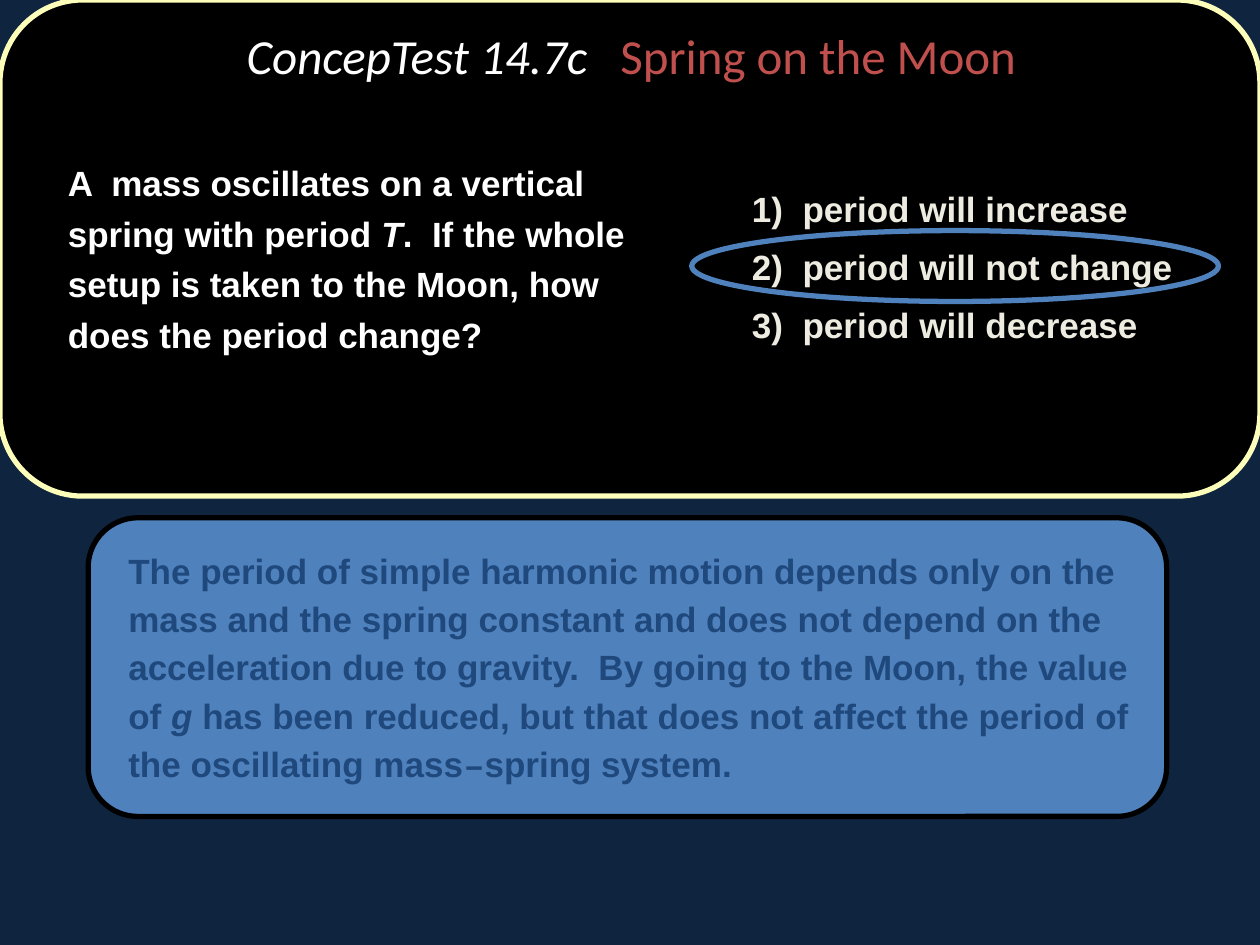
from pptx import Presentation
from pptx import util as u
from pptx.dml.color import RGBColor
from pptx.enum import shapes, text

W, H = u.Inches(10), u.Inches(7.5)
NAVY = RGBColor(0x0F, 0x24, 0x3E)
BLUE = RGBColor(0x4F, 0x81, 0xBD)
DARK_BLUE = RGBColor(0x1F, 0x49, 0x7D)
BLACK = RGBColor(0, 0, 0)
WHITE = RGBColor(0xFF, 0xFF, 0xFF)
CREAM = RGBColor(0xEE, 0xEC, 0xE1)
YELLOW = RGBColor(0xFC, 0xFE, 0xB9)
RED = RGBColor(0xC0, 0x50, 0x4D)


def place(x, y, w, h):
    """Turn shares of the slide's size into lengths."""
    return [u.Emu(int(v)) for v in (x * W, y * H, w * W, h * H)]


def add_outline(s, kind, box, line, fill=None):
    sp = s.shapes.add_shape(kind, *place(*box))
    sp.shadow.inherit = False
    if fill is None:
        sp.fill.background()
    else:
        sp.fill.solid()
        sp.fill.fore_color.rgb = fill
    sp.line.color.rgb = line
    sp.line.width = u.Pt(3)


def add_run(p, words, size, color, font="Arial", bold=False, italic=False):
    r = p.add_run()
    r.text = words
    r.font.size, r.font.name = u.Pt(size), font
    r.font.bold, r.font.italic = bold, italic
    r.font.color.rgb = color


def add_text_box(s, box):
    tf = s.shapes.add_textbox(*place(*box)).text_frame
    tf.word_wrap = True
    return tf


def add_body(s, box, paragraphs, color, spacing):
    """Add bold indented paragraphs; each is a list of (words, format) runs."""
    tf = add_text_box(s, box)
    for i, runs in enumerate(paragraphs):
        p = tf.add_paragraph() if i else tf.paragraphs[0]
        p.line_spacing = spacing
        p.space_before = u.Pt(7)
        p._p.get_or_add_pPr().set("marL", str(u.Inches(0.44)))
        for words, fmt in runs:
            add_run(p, words, 20, color, bold=True, **fmt)


def add_title(s, box):
    tf = add_text_box(s, box)
    tf.vertical_anchor = text.MSO_ANCHOR.MIDDLE
    p = tf.paragraphs[0]
    p.alignment = text.PP_ALIGN.CENTER
    p.line_spacing = 0.9
    add_run(p, "ConcepTest 14.7c   ", 28, WHITE, "Calibri", italic=True)
    add_run(p, "Spring on the Moon", 28, RED, "Calibri")


def main():
    prs = Presentation()
    prs.slide_width, prs.slide_height = W, H
    s = prs.slides.add_slide(prs.slide_layouts[6])
    s.background.fill.solid()
    s.background.fill.fore_color.rgb = NAVY

    rounded, oval = shapes.MSO_SHAPE.ROUNDED_RECTANGLE, shapes.MSO_SHAPE.OVAL
    plain, italic = {}, {"italic": True}
    add_outline(s, rounded, (0.07, 0.548, 0.856, 0.316), BLACK, BLUE)
    add_outline(s, rounded, (0, 0, 1, 0.525), YELLOW, BLACK)

    question = [
        ("A  mass oscillates on a vertical spring with period ", plain),
        ("T", italic),
        (".  If the whole setup is taken to the Moon, how does the period "
         "change?", plain)]
    add_body(s, (0, 0.156, 0.506, 0.229), [question], WHITE, 1.2)

    outcomes = ["increase", "not change", "decrease"]
    answers = [[(f"{n})  period will {outcome}", plain)]
               for n, outcome in enumerate(outcomes, 1)]
    add_body(s, (0.543, 0.187, 0.457, 0.223), answers, CREAM, 1.1)

    explanation = [
        ("The period of simple harmonic motion depends only on the mass and "
         "the spring constant and does not depend on the acceleration due to "
         "gravity.  By going to the Moon, the value of ", plain),
        ("g", italic),
        (" has been reduced, but that does not affect the period of the "
         "oscillating mass", plain),
        ("–", {"font": "Courier New"}),
        ("spring system.", plain)]
    add_body(s, (0.048, 0.568, 0.883, 0.323), [explanation], DARK_BLUE, 1.15)

    add_outline(s, oval, (0.549, 0.244, 0.418, 0.075), BLUE)
    add_title(s, (0.102, 0, 0.798, 0.123))
    prs.save("out.pptx")


if __name__ == "__main__":
    main()
